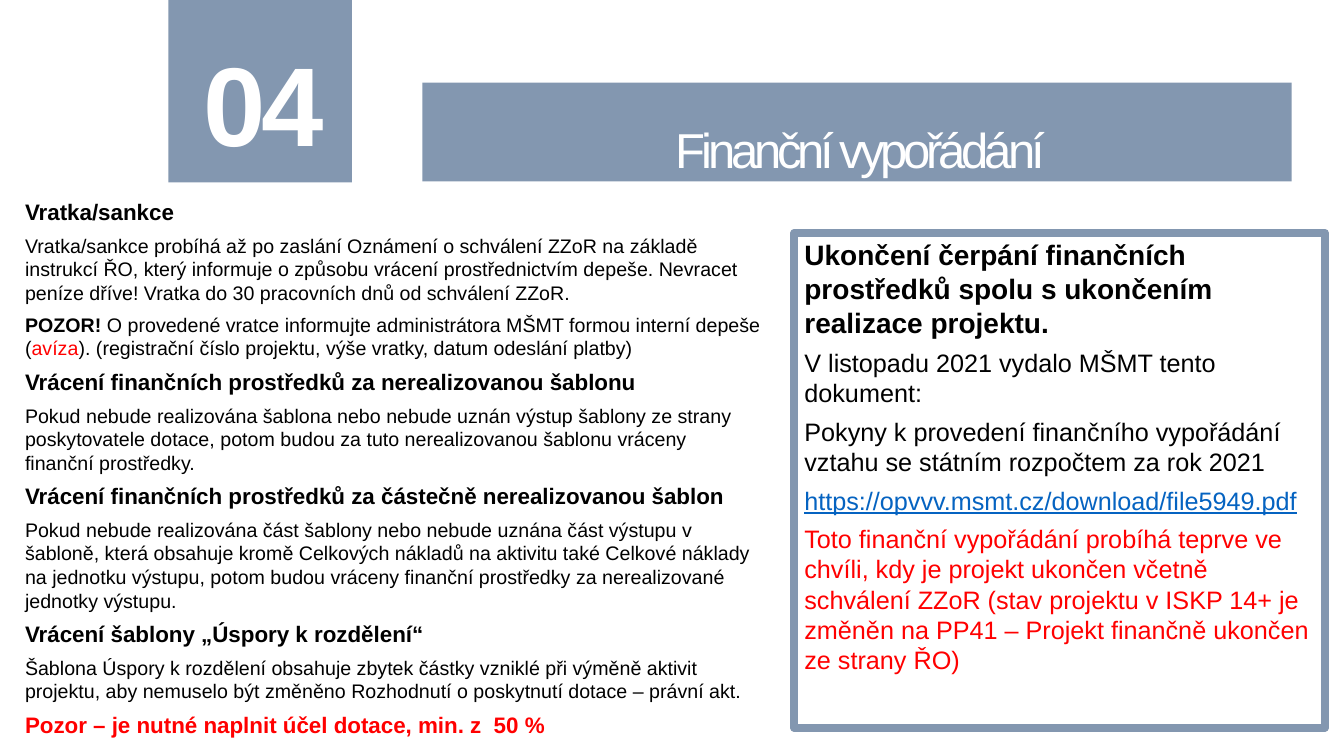
from pptx import Presentation
from pptx.dml.color import RGBColor
from pptx.enum import shapes, text
from pptx.util import Inches, Pt

COLORS = {"slate": "8397B0", "white": "FFFFFF", "black": "000000",
          "red": "FF0000", "link": "0563C1"}

INSTRUCTIONS = [
    ("heading", "Vratka/sankce"),
    ("body", "Vratka/sankce probíhá až po zaslání Oznámení o schválení ZZoR na základě "
             "instrukcí ŘO, který informuje o způsobu vrácení prostřednictvím depeše. "
             "Nevracet peníze dříve! Vratka do 30 pracovních dnů od schválení ZZoR."),
    ("body", [("POZOR! ", {"bold": True}),
              ("O provedené vratce informujte administrátora MŠMT formou interní depeše (", {}),
              ("avíza", {"color": "red"}),
              ("). (registrační číslo projektu, výše vratky, datum odeslání platby)", {})]),
    ("heading", "Vrácení finančních prostředků za nerealizovanou šablonu"),
    ("body", "Pokud nebude realizována šablona nebo nebude uznán výstup šablony ze strany "
             "poskytovatele dotace, potom budou za tuto nerealizovanou šablonu vráceny "
             "finanční prostředky."),
    ("heading", "Vrácení finančních prostředků za částečně nerealizovanou šablon"),
    ("body", "Pokud nebude realizována část šablony nebo nebude uznána část výstupu v šabloně, "
             "která obsahuje kromě Celkových nákladů na aktivitu také Celkové náklady na "
             "jednotku výstupu, potom budou vráceny finanční prostředky za nerealizované "
             "jednotky výstupu."),
    ("heading", "Vrácení šablony „Úspory k rozdělení“"),
    ("body", "Šablona Úspory k rozdělení obsahuje zbytek částky vzniklé při výměně aktivit "
             "projektu, aby nemuselo být změněno Rozhodnutí o poskytnutí dotace – právní akt."),
    ("warning", "Pozor – je nutné naplnit účel dotace, min. z  50 %"),
]

CLOSING = [
    ("lead", "Ukončení čerpání finančních prostředků spolu s ukončením realizace projektu."),
    ("note", "V listopadu 2021 vydalo MŠMT tento dokument:"),
    ("note", "Pokyny k provedení finančního vypořádání vztahu se státním rozpočtem za rok 2021"),
    ("address", "https://opvvv.msmt.cz/download/file5949.pdf"),
    ("alert", "Toto finanční vypořádání probíhá teprve ve chvíli, kdy je projekt ukončen včetně "
              "schválení ZZoR (stav projektu v ISKP 14+ je změněn na PP41 – Projekt finančně "
              "ukončen ze strany ŘO)"),
]

STYLES = {
    "heading": {"size": 16, "bold": True},
    "body": {"size": 14},
    "warning": {"size": 16, "bold": True, "color": "red"},
    "lead": {"size": 20, "bold": True},
    "note": {"size": 18},
    "address": {"size": 18, "color": "link", "underline": True},
    "alert": {"size": 18, "color": "red"},
}


def rgb(name):
    return RGBColor.from_string(COLORS[name])


def set_font(font, size, color="black", bold=False, underline=False):
    font.name = "Arial"
    font.size = Pt(size)
    font.color.rgb = rgb(color)
    font.bold = bold
    font.underline = underline


def fill_paragraphs(frame, content):
    """Write (style name, text or list of runs) pairs into a text frame."""
    frame.word_wrap = True
    frame.vertical_anchor = text.MSO_ANCHOR.TOP
    for index, (style, wording) in enumerate(content):
        paragraph = frame.add_paragraph() if index else frame.paragraphs[0]
        paragraph.alignment = text.PP_ALIGN.LEFT
        paragraph.space_before = Pt(6 if index else 0)
        runs = [(wording, {})] if isinstance(wording, str) else wording
        if len(runs) == 1:
            set_font(paragraph.font, **STYLES[style])
        for words, changes in runs:
            run = paragraph.add_run()
            run.text = words
            if len(runs) > 1:
                set_font(run.font, **{**STYLES[style], **changes})


def add_rectangle(slide, left, top, width, height):
    rectangle = slide.shapes.add_shape(
        shapes.MSO_SHAPE.RECTANGLE,
        Inches(left), Inches(top), Inches(width), Inches(height))
    rectangle.shadow.inherit = False
    return rectangle


def add_banner(slide, box, wording, size, line_spacing, bold=False):
    banner = add_rectangle(slide, *box)
    banner.fill.solid()
    banner.fill.fore_color.rgb = rgb("slate")
    banner.line.fill.background()
    frame = banner.text_frame
    frame.word_wrap = True
    frame.vertical_anchor = text.MSO_ANCHOR.MIDDLE
    frame.margin_left, frame.margin_top = Inches(0.16), Inches(0.59)
    frame.margin_right, frame.margin_bottom = Inches(0.1), Inches(0.05)
    paragraph = frame.paragraphs[0]
    paragraph.alignment = text.PP_ALIGN.CENTER
    paragraph.line_spacing = line_spacing
    set_font(paragraph.font, size, "white", bold)
    run = paragraph.add_run()
    run.text = wording
    run.font._element.set("spc", "-300")


def add_instructions(slide):
    box = slide.shapes.add_textbox(Inches(0.15), Inches(1.92), Inches(7.5), Inches(5.42))
    fill_paragraphs(box.text_frame, INSTRUCTIONS)


def add_closing_panel(slide):
    panel = add_rectangle(slide, 7.88, 2.31, 5.26, 4.91)
    panel.fill.background()
    panel.line.color.rgb = rgb("slate")
    panel.line.width = Pt(5.75)
    fill_paragraphs(panel.text_frame, CLOSING)


def main():
    deck = Presentation()
    deck.slide_width, deck.slide_height = Inches(13.33), Inches(7.5)
    slide = deck.slides.add_slide(deck.slide_layouts[6])
    add_banner(slide, (1.67, 0, 1.82, 1.81), "04", 80, 0.7, bold=True)
    add_instructions(slide)
    add_banner(slide, (4.19, 0.82, 8.62, 0.98), "Finanční vypořádání", 35, 0.5)
    add_closing_panel(slide)
    deck.save("out.pptx")


if __name__ == "__main__":
    main()
